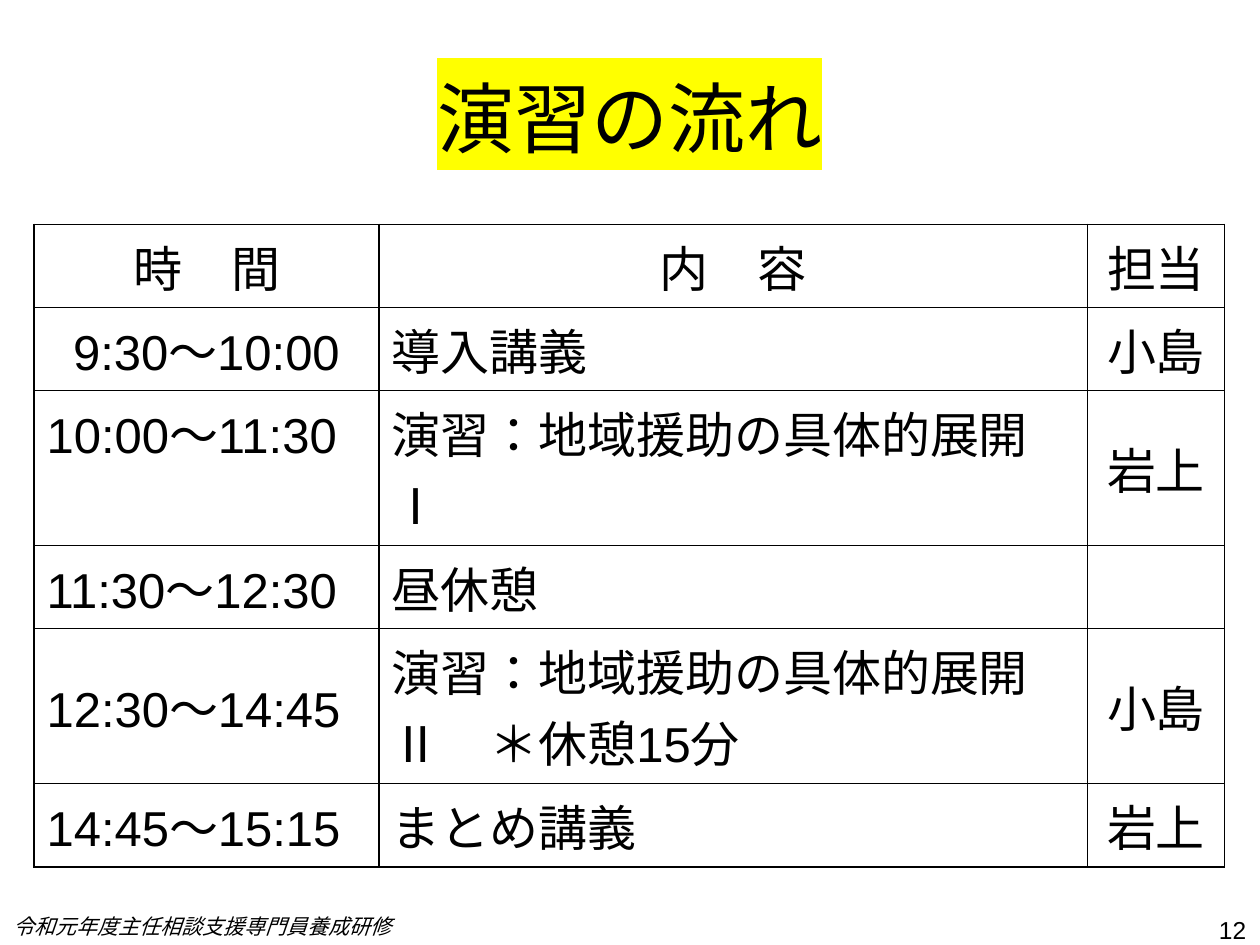
import pptx
import pptx.util
import pptx.dml.color
import pptx.enum.lang
import pptx.enum.text
import pptx.oxml
import pptx.oxml.ns
from lxml import etree

Inches, Pt = pptx.util.Inches, pptx.util.Pt
ALIGN, ANCHOR = pptx.enum.text.PP_ALIGN, pptx.enum.text.MSO_ANCHOR
JAPANESE = pptx.enum.lang.MSO_LANGUAGE_ID.JAPANESE
qn = pptx.oxml.ns.qn

BLACK = pptx.dml.color.RGBColor(0x00, 0x00, 0x00)
YELLOW = pptx.dml.color.RGBColor(0xFF, 0xFF, 0x00)
LATIN_FONT = "Arial"
JAPANESE_FONT = "Noto Sans CJK JP"

COLUMN_WIDTHS = (2.74, 5.62, 1.09)
ONE_LINE, TWO_LINES = 0.66, 1.23
ROW_HEIGHTS = (ONE_LINE, ONE_LINE, TWO_LINES, ONE_LINE, TWO_LINES, ONE_LINE)
HEADER = ("時　間", "内　容", "担当")
SESSIONS = (
    ("9:30～10:00", "導入講義", "小島"),
    ("10:00～11:30", "演習：地域援助の具体的展開Ⅰ", "岩上"),
    ("11:30～12:30", "昼休憩", ""),
    ("12:30～14:45", "演習：地域援助の具体的展開Ⅱ　＊休憩15分", "小島"),
    ("14:45～15:15", "まとめ講義", "岩上"),
)
FIRST_SESSION_ROW, AFTERNOON_ROW = 1, 4


def write(text_frame, text, size, align=ALIGN.LEFT, font=LATIN_FONT, italic=None):
    text_frame.text = text
    paragraph = text_frame.paragraphs[0]
    paragraph.alignment = align
    paragraph.font.size = Pt(size)
    for run in paragraph.runs:
        run.font.size = Pt(size)
        run.font.name = font
        run.font.italic = italic
        run.font.language_id = JAPANESE
        run.font.color.rgb = BLACK
        east_asian = etree.SubElement(run.font._element, qn("a:ea"))
        east_asian.set("typeface", JAPANESE_FONT)


def add_text(slide, box, text, size, **style):
    text_frame = slide.shapes.add_textbox(*map(Inches, box)).text_frame
    text_frame.word_wrap = True
    write(text_frame, text, size, **style)
    return text_frame


def add_title(slide, box):
    title = add_text(slide, box, "演習の流れ", 44, align=ALIGN.CENTER)
    title.vertical_anchor = ANCHOR.MIDDLE
    # Yellow marker behind the words
    fill = title.paragraphs[0].runs[0].font._element.find(qn("a:solidFill"))
    highlight = etree.Element(qn("a:highlight"))
    etree.SubElement(highlight, qn("a:srgbClr")).set("val", str(YELLOW))
    fill.addnext(highlight)


def draw_borders(cell):
    properties = cell._tc.get_or_add_tcPr()
    for position, side in enumerate(("lnL", "lnR", "lnT", "lnB")):
        line = etree.Element(qn(f"a:{side}"))
        line.set("w", str(Pt(1)))
        fill = etree.SubElement(line, qn("a:solidFill"))
        etree.SubElement(fill, qn("a:srgbClr")).set("val", str(BLACK))
        properties.insert(position, line)


def add_timetable(slide, box):
    rows = (HEADER,) + SESSIONS
    timetable = slide.shapes.add_table(
        len(rows), len(COLUMN_WIDTHS), *map(Inches, box)).table
    timetable.first_row = timetable.horz_banding = False
    for column, width in zip(timetable.columns, COLUMN_WIDTHS):
        column.width = Inches(width)
    for r, entries in enumerate(rows):
        timetable.rows[r].height = Inches(ROW_HEIGHTS[r])
        for c, entry in enumerate(entries):
            cell = timetable.cell(r, c)
            in_charge = c == len(COLUMN_WIDTHS) - 1
            centred = r == 0 or in_charge
            write(cell.text_frame, entry, 28,
                  align=ALIGN.CENTER if centred else ALIGN.LEFT)
            if in_charge or (r, c) == (AFTERNOON_ROW, 0):
                cell.vertical_anchor = ANCHOR.MIDDLE
            cell.fill.background()
            draw_borders(cell)
    # The one-digit hour is set in to line up with the others
    timetable.cell(FIRST_SESSION_ROW, 0).margin_left = Inches(0.31)


def add_footer(slide, left_box, right_box):
    add_text(slide, left_box, "令和元年度主任相談支援専門員養成研修", 12,
             font=JAPANESE_FONT, italic=True)
    add_text(slide, right_box, "12", 14, align=ALIGN.RIGHT)


def main():
    presentation = pptx.Presentation()
    presentation.slide_width, presentation.slide_height = Inches(10), Inches(7.5)
    slide = presentation.slides.add_slide(presentation.slide_layouts[6])
    add_title(slide, (0.5, 0.3, 9, 1.25))
    add_timetable(slide, (0.27, 1.78, sum(COLUMN_WIDTHS), sum(ROW_HEIGHTS)))
    add_footer(slide, (0.01, 7.2, 3.63, 0.29), (7.66, 7.21, 2.33, 0.29))
    presentation.save("out.pptx")


if __name__ == "__main__":
    main()
